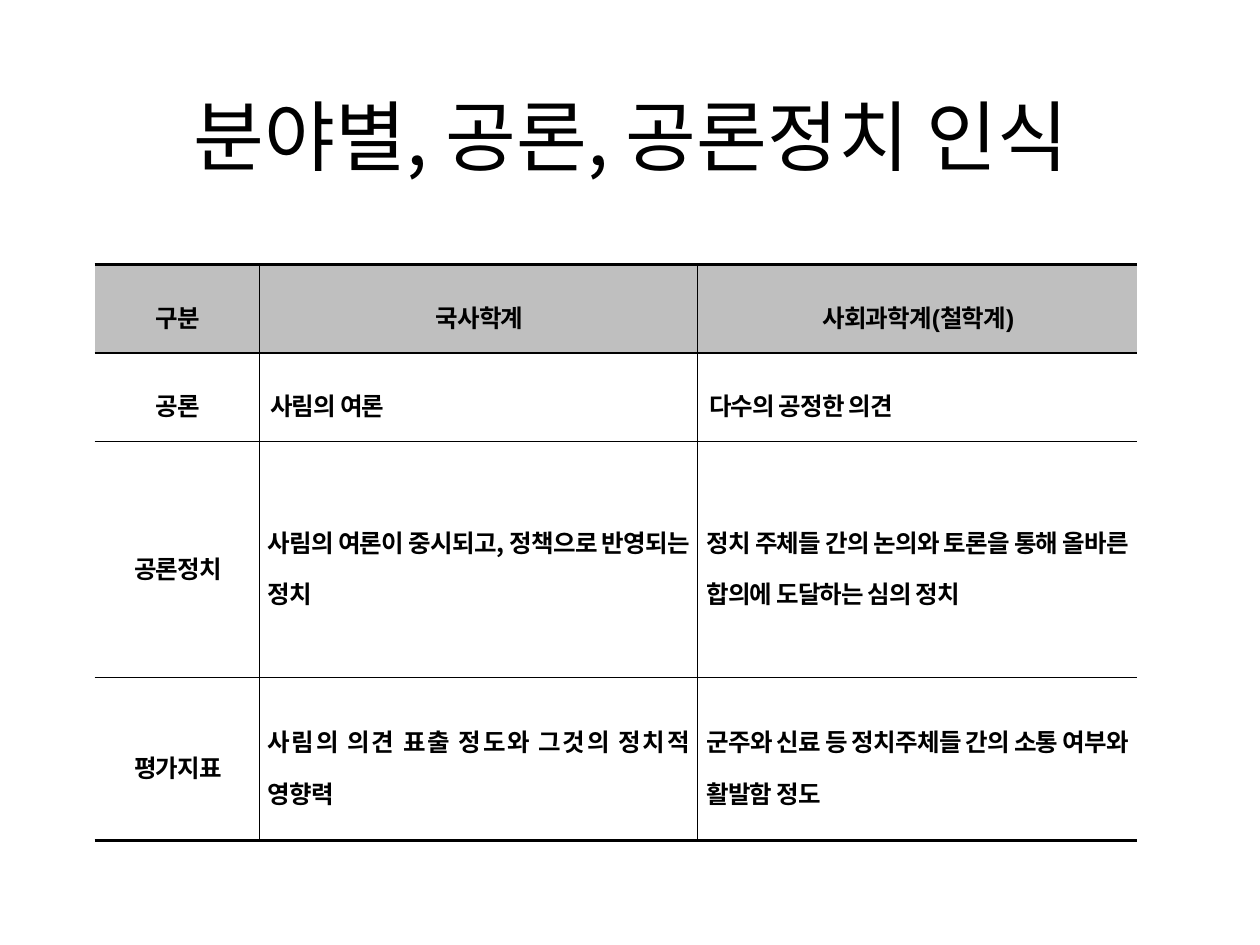
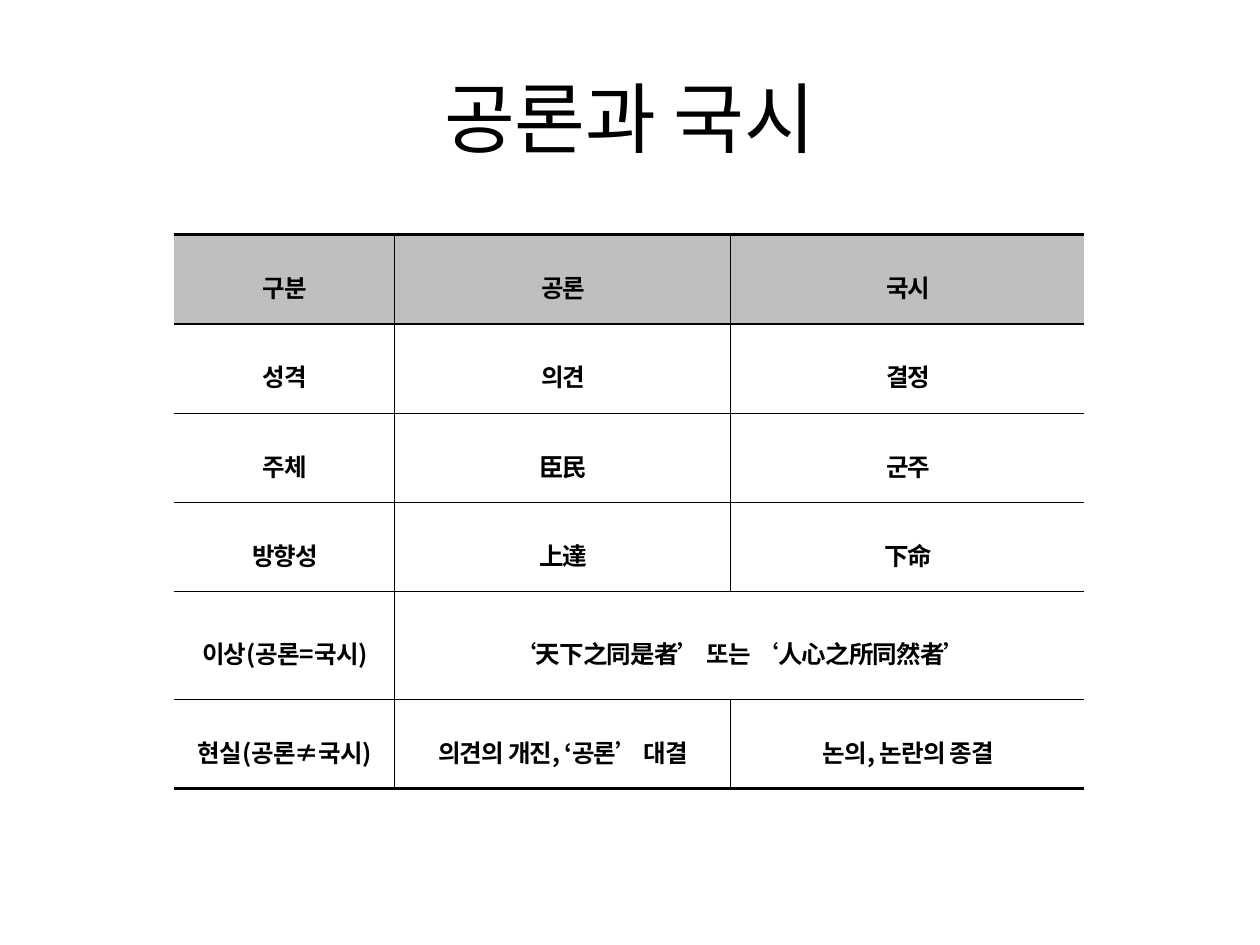
import pptx
import pptx.dml.color
import pptx.enum.text
import pptx.oxml.ns
import pptx.util
from lxml import etree

ALIGN = pptx.enum.text.PP_ALIGN
MIDDLE = pptx.enum.text.MSO_ANCHOR.MIDDLE
WIDTH, HEIGHT = pptx.util.Inches(10), pptx.util.Inches(7.5)
BLACK, HEADER_GRAY = "000000", "BFBFBF"
KOREAN, LATIN = "Noto Sans CJK KR", "Arial"
NO_LINE, THIN, MEDIUM, THICK = 0, 0.28, 1.13, 1.98
FIRST_INDENT = pptx.util.Inches(0.02)
TITLE_ONLY = 5

RECOGNITION_ROWS = [
    ["구분", "국사학계", "사회과학계(철학계)"],
    ["공론", "사림의 여론", "다수의 공정한 의견"],
    ["공론정치", "사림의 여론이 중시되고, 정책으로 반영되는 정치",
     "정치 주체들 간의 논의와 토론을 통해 올바른 합의에 도달하는 심의 정치"],
    ["평가지표", "사림의 의견 표출 정도와 그것의 정치적 영향력",
     "군주와 신료 등 정치주체들 간의 소통 여부와 활발함 정도"],
]
# None continues the cell to its left
COMPARISON_ROWS = [
    ["구분", "공론", "국시"],
    ["성격", "의견", "결정"],
    ["주체", "臣民", "군주"],
    ["방향성", "上達", "下命"],
    ["이상(공론=국시)", "‘天下之同是者’ 또는 ‘人心之所同然者’", None],
    ["현실(공론≠국시)", "의견의 개진, ‘공론’ 대결", "논의, 논란의 종결"],
]


def color(code):
    return pptx.dml.color.RGBColor.from_string(code)


def across(percent):
    return round(WIDTH * percent / 100)


def down(percent):
    return round(HEIGHT * percent / 100)


def add_run(para, words, size, latin, bold=False):
    span = para.add_run()
    span.text = words
    span.font.size = pptx.util.Pt(size)
    span.font.bold = bold
    span.font.name = latin
    span.font.color.rgb = color(BLACK)
    east_asian = etree.SubElement(span.font._element, pptx.oxml.ns.qn("a:ea"))
    east_asian.set("typeface", KOREAN)
    return span


def add_titled_page(deck, words, left, top):
    page = deck.slides.add_slide(deck.slide_layouts[TITLE_ONLY])
    title = page.shapes.title
    title.left, title.top = across(left), down(top)
    title.width, title.height = across(90), down(16.67)
    title.text_frame.vertical_anchor = MIDDLE
    para = title.text_frame.paragraphs[0]
    para.alignment = ALIGN.CENTER
    add_run(para, words, 44, KOREAN)
    return page


def set_borders(cell, widths):
    """Draw the left, right, top and bottom edges, in that order."""
    properties = cell._tc.get_or_add_tcPr()
    for side, width in zip("LRTB", widths):
        line = etree.SubElement(properties, pptx.oxml.ns.qn(f"a:ln{side}"))
        if width == NO_LINE:
            etree.SubElement(line, pptx.oxml.ns.qn("a:noFill"))
            continue
        line.set("w", str(pptx.util.Pt(width)))
        fill = etree.SubElement(line, pptx.oxml.ns.qn("a:solidFill"))
        etree.SubElement(fill, pptx.oxml.ns.qn("a:srgbClr")).set("val", BLACK)


def fill_cell(cell, words, alignment, is_header, indented):
    cell.vertical_anchor = MIDDLE
    cell.margin_left = cell.margin_right = pptx.util.Inches(0.07)
    cell.margin_top = cell.margin_bottom = pptx.util.Inches(0.02)
    if is_header:
        cell.fill.solid()
        cell.fill.fore_color.rgb = color(HEADER_GRAY)
    else:
        cell.fill.background()
    if words is None:
        return
    para = cell.text_frame.paragraphs[0]
    para.alignment = alignment
    para.line_spacing = 1.44
    if indented:
        layout = para._p.get_or_add_pPr()
        layout.set("marL", "0")
        layout.set("indent", str(FIRST_INDENT))
    span = add_run(para, words, 14, LATIN if is_header else KOREAN, bold=True)
    span.font._element.set("spc", "-50")


def add_ruled_table(page, rows, left, top, widths, heights,
                    body_align=ALIGN.CENTER, unindented_from=None):
    frame = page.shapes.add_table(
        len(rows), len(widths), across(left), down(top),
        across(sum(widths)), down(sum(heights)))
    table = frame.table
    table.first_row = table.horz_banding = False
    for column, width in zip(table.columns, widths):
        column.width = across(width)
    for row, height in zip(table.rows, heights):
        row.height = down(height)

    # Heavy rules close the table, a medium one sits under the header
    rules = [THICK, MEDIUM] + [THIN] * (len(rows) - 2) + [THICK]
    for r, row in enumerate(rows):
        for c, words in enumerate(row):
            cell = table.cell(r, c)
            joins_left = c == 0 or words is None
            joins_right = c == len(row) - 1 or row[c + 1] is None
            set_borders(cell, [NO_LINE if joins_left else THIN,
                               NO_LINE if joins_right else THIN,
                               rules[r], rules[r + 1]])
            is_label = r == 0 or c == 0
            indented = is_label or unindented_from is None or r < unindented_from
            fill_cell(cell, words, ALIGN.CENTER if is_label else body_align,
                      r == 0, indented)
            if words is None:
                table.cell(r, c - 1).merge(cell)


def main():
    deck = pptx.Presentation()
    deck.slide_width, deck.slide_height = WIDTH, HEIGHT

    # How each field sees public opinion
    page = add_titled_page(deck, "분야별, 공론, 공론정치 인식", 5.1, 5.87)
    add_ruled_table(page, RECOGNITION_ROWS, 7.5, 28, [13.05, 34.83, 34.83],
                    [9.37, 9.37, 24.97, 17.2],
                    body_align=ALIGN.JUSTIFY, unindented_from=2)

    # Public opinion against state policy
    page = add_titled_page(deck, "공론과 국시", 5, 4)
    add_ruled_table(page, COMPARISON_ROWS, 13.8, 24.8, [17.45, 26.7, 28.1],
                    [9.45] * len(COMPARISON_ROWS))

    deck.save("out.pptx")


if __name__ == "__main__":
    main()
